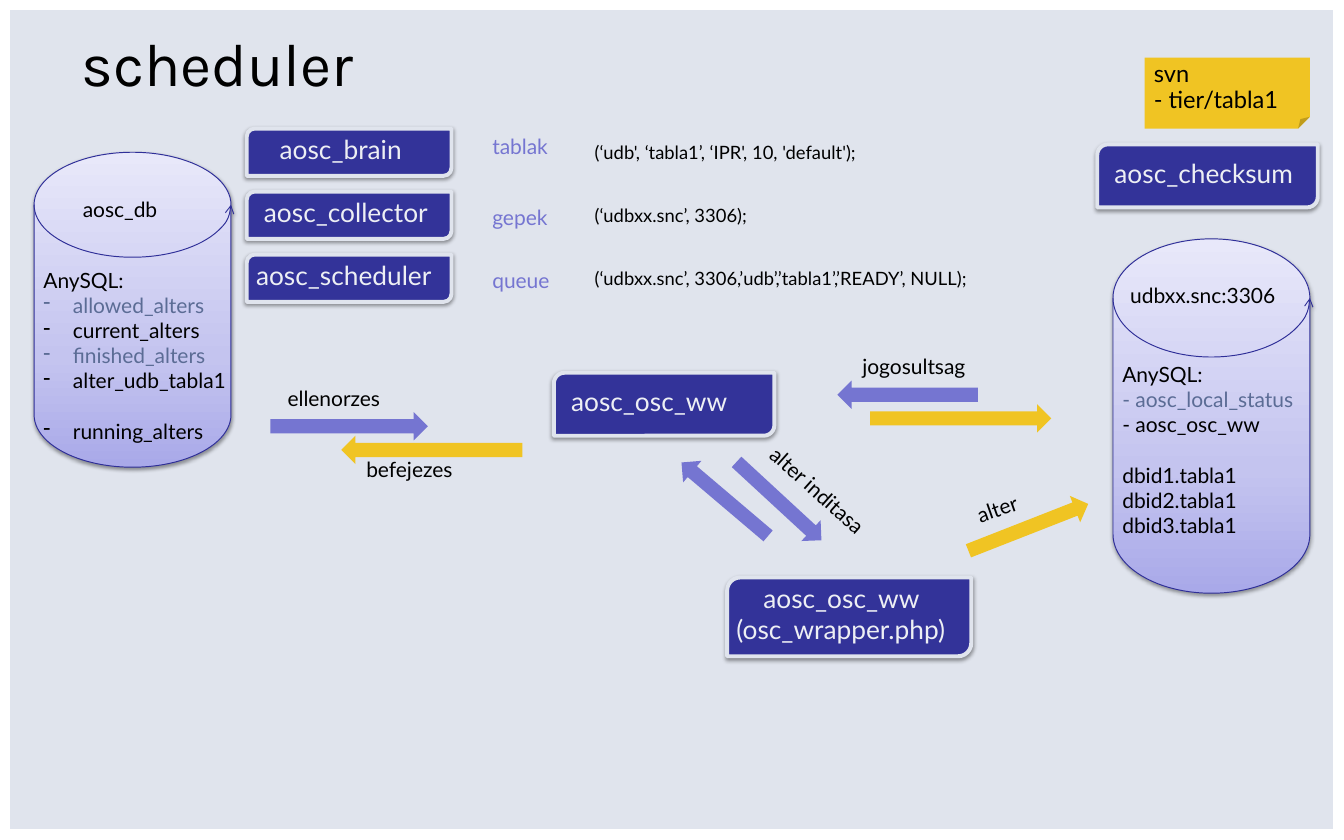
"""Build the scheduler slide: databases, processes and the arrows between them."""
import lxml.etree
import pptx
import pptx.dml.color
import pptx.enum.shapes
import pptx.enum.text
import pptx.oxml.ns
import pptx.util

Pt = pptx.util.Pt
qn = pptx.oxml.ns.qn
SHAPES = pptx.enum.shapes.MSO_SHAPE
COLORS = {
    "background": "E0E4ED", "white": "FFFFFF", "black": "000000",
    "navy": "333399", "outline": "2F2F98", "violet": "7575D1",
    "gold": "F0C423", "muted": "5B6C95", "pale": "EDEFF4",
    "disk_bottom": "A9A9E9", "disk_middle": "C4C4EF", "disk_top": "E8E8FA",
}


def rgb(name):
    return pptx.dml.color.RGBColor.from_string(COLORS[name])


def add_xml(parent, tag, **attributes):
    return lxml.etree.SubElement(parent, qn(tag), attributes)


def write_text(paragraph, text, *, size=16, color="black", font="Lato",
               bullet=None, indent=0, space_before=0, line_spacing=1.0):
    paragraph.alignment = pptx.enum.text.PP_ALIGN.LEFT
    paragraph.line_spacing = line_spacing
    paragraph.space_before = Pt(space_before)
    run = paragraph.add_run()
    run.text = text
    run.font.size = Pt(size)
    run.font.name = font
    run.font.color.rgb = rgb(color)
    properties = paragraph._p.get_or_add_pPr()
    if indent:
        properties.set("marL", str(Pt(indent)))
    if bullet:
        properties.set("indent", str(-Pt(indent)))
        add_xml(properties, "a:buChar", char=bullet)


def fill_frame(frame, lines, **text_format):
    frame.word_wrap = True
    frame.vertical_anchor = pptx.enum.text.MSO_ANCHOR.TOP
    for index, (text, line_format) in enumerate(lines):
        paragraph = frame.add_paragraph() if index else frame.paragraphs[0]
        write_text(paragraph, text, **{**text_format, **line_format})


def add_label(slide, lines, left, top, width, height=27, rotation=0, **text_format):
    if isinstance(lines, str):
        lines = [(lines, {})]
    label = slide.shapes.add_textbox(Pt(left), Pt(top), Pt(width), Pt(height))
    label.rotation = rotation
    fill_frame(label.text_frame, lines, **text_format)


def add_figure(slide, kind, left, top, width, height, *, fill=None,
               line=None, line_width=1, shadow=False):
    shape = slide.shapes.add_shape(kind, Pt(left), Pt(top), Pt(width), Pt(height))
    shape.shadow.inherit = False
    if fill:
        shape.fill.solid()
        shape.fill.fore_color.rgb = rgb(fill)
    else:
        shape.fill.background()
    if line:
        shape.line.color.rgb = rgb(line)
        shape.line.width = Pt(line_width)
    else:
        shape.line.fill.background()
    if shadow:
        effects = shape._element.spPr.find(qn("a:effectLst"))
        outer = add_xml(effects, "a:outerShdw", blurRad=str(Pt(3.1)),
                        dist=str(Pt(1.6)), dir="5400000", rotWithShape="0")
        color = add_xml(outer, "a:srgbClr", val=COLORS["black"])
        add_xml(color, "a:alpha", val="38000")
    return shape


def add_disk(slide, left, top, width, height):
    disk = add_figure(slide, SHAPES.FLOWCHART_MAGNETIC_DISK, left, top, width,
                      height, line="outline", line_width=0.75, shadow=True)
    disk.fill.gradient()
    disk.fill.gradient_angle = 90
    properties = disk._element.spPr
    stops = properties.find(".//" + qn("a:gsLst"))
    for stop in list(stops):
        stops.remove(stop)
    for percent, name in ((0, "disk_bottom"), (35, "disk_middle"), (100, "disk_top")):
        stop = add_xml(stops, "a:gs", pos=str(percent * 1000))
        add_xml(stop, "a:srgbClr", val=COLORS[name])
    add_xml(properties.find(qn("a:ln")), "a:headEnd", type="arrow")


def add_process(slide, lines, box, text_left, text_top, text_width):
    add_figure(slide, SHAPES.ROUND_2_DIAG_RECTANGLE, *box, fill="navy",
               line="background", line_width=3, shadow=True)
    add_label(slide, lines, text_left, text_top, text_width, 32,
              size=20, color="pale")


def add_arrow(slide, left, top, width, rotation, color):
    arrow = add_figure(slide, SHAPES.RIGHT_ARROW, left, top, width, 21.6, fill=color)
    arrow.rotation = rotation


def add_title(slide, text):
    title = slide.shapes.title
    title.left, title.top, title.width, title.height = Pt(62), Pt(26), Pt(282), Pt(65)
    frame = title.text_frame
    frame.auto_size = pptx.enum.text.MSO_AUTO_SIZE.NONE
    frame.margin_left = frame.margin_top = frame.margin_right = frame.margin_bottom = 0
    fill_frame(frame, [(text, {})], size=46, font="Karla", line_spacing=0.9)


def add_databases(slide):
    add_disk(slide, 26, 116, 150, 240)
    add_label(slide, "aosc_db", 56, 146, 126)
    item = {"bullet": "-", "indent": 22.5}
    add_label(slide, [
        ("AnySQL:", {}),
        ("allowed_alters", {**item, "color": "muted"}),
        ("current_alters", item),
        ("finished_alters", {**item, "color": "muted"}),
        ("alter_udb_tabla1", item),
        ("running_alters", {**item, "space_before": 19.2}),
    ], 26, 200, 156, 143)

    add_disk(slide, 848, 182, 150, 270)
    add_label(slide, "udbxx.snc:3306", 854, 212, 132)
    add_label(slide, [
        ("AnySQL:", {}),
        ("- aosc_local_status", {"color": "muted"}),
        ("- aosc_osc_ww", {}),
        ("dbid1.tabla1", {"space_before": 19.2}),
        ("dbid2.tabla1", {}),
        ("dbid3.tabla1", {}),
    ], 848, 272, 176, 163)


def add_processes(slide):
    stack = (("aosc_brain", 206), ("aosc_collector", 194), ("aosc_scheduler", 188))
    for row, (name, text_left) in enumerate(stack):
        top = 98 + 48 * row
        add_process(slide, name, (188, top, 156, 36), text_left, top, 162)
    add_process(slide, "aosc_checksum", (836, 110, 168, 48), 842, 116, 156)
    add_process(slide, "aosc_osc_ww", (422, 284, 168, 48), 428, 290, 156)
    add_process(slide, [("aosc_osc_ww", {"indent": 20.5}), ("(osc_wrapper.php)", {})],
                (554, 440, 186, 60), 554, 440, 180)


def add_table_examples(slide):
    for name, name_top, values, values_top in (
        ("tablak", 98, "(‘udb', ‘tabla1’, ‘IPR', 10, 'default');", 104),
        ("gepek", 152, "(‘udbxx.snc’, 3306);", 152),
        ("queue", 200, "(‘udbxx.snc’, 3306,’udb’,’tabla1’,’READY’, NULL);", 200),
    ):
        add_label(slide, name, 368, name_top, 65, color="violet")
        add_label(slide, values, 446, values_top, 318, 24, size=14)


def add_flows(slide):
    for arrow in (
        (206, 314, 120, 0, "violet"),
        (260, 332, 138, 180, "gold"),
        (638, 290, 107, 180, "violet"),
        (663, 308, 138, 0, "gold"),
        (549.5, 371, 88, 42.7, "violet"),
        (509, 369.5, 86.5, 220.3, "violet"),
        (734.5, 391, 98, 338.6, "gold"),
    ):
        add_arrow(slide, *arrow)
    for text, left, top, width, rotation in (
        ("ellenorzes", 212, 290, 114, 0),
        ("befejezes", 272, 344, 114, 0),
        ("jogosultsag", 650, 266, 114, 0),
        ("alter inditasa", 569.5, 363.5, 114, 41.8),
        ("alter", 736.5, 371.5, 63, 340.7),
    ):
        add_label(slide, text, left, top, width, rotation=rotation)


def main():
    presentation = pptx.Presentation()
    presentation.slide_width, presentation.slide_height = Pt(1024), Pt(640)
    slide = presentation.slides.add_slide(presentation.slide_layouts[5])
    slide.background.fill.solid()
    slide.background.fill.fore_color.rgb = rgb("background")
    add_figure(slide, SHAPES.RECTANGLE, 0, 0, 1024, 640, line="white", line_width=16)
    add_title(slide, "scheduler")
    note = add_figure(slide, SHAPES.FOLDED_CORNER, 872, 44, 126, 54, fill="gold")
    fill_frame(note.text_frame, [("svn", {}), ("- tier/tabla1", {})],
               size=18, line_spacing=0.9)
    add_databases(slide)
    add_processes(slide)
    add_table_examples(slide)
    add_flows(slide)
    presentation.save("out.pptx")


if __name__ == "__main__":
    main()
